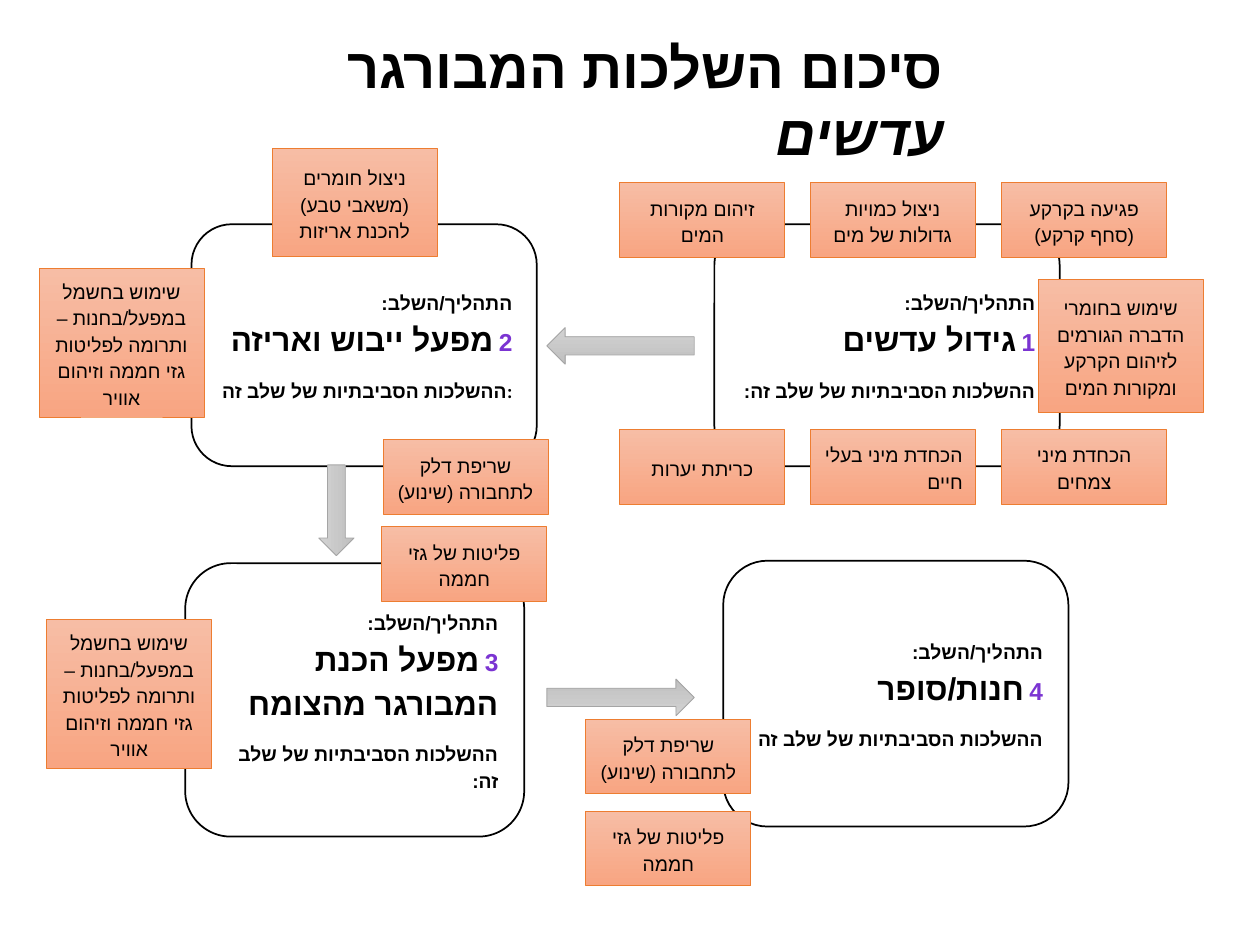
from copy import deepcopy

from lxml import etree
from pptx import Presentation
from pptx.dml.color import RGBColor
from pptx.enum.shapes import MSO_SHAPE
from pptx.enum.text import MSO_ANCHOR, PP_ALIGN
from pptx.oxml.ns import qn
from pptx.util import Inches, Pt

RECT = MSO_SHAPE.RECTANGLE
ROUND = MSO_SHAPE.ROUNDED_RECTANGLE
ARROW = MSO_SHAPE.LEFT_ARROW
MIDDLE = MSO_ANCHOR.MIDDLE
RIGHT, CENTER = PP_ALIGN.RIGHT, PP_ALIGN.CENTER

COLORS = {
    "black": "000000", "white": "FFFFFF", "number": "7B34D2",
    "label_top": "F7BDA5", "label_bottom": "F8A582", "label_line": "ED7D31",
    "arrow_top": "D2D2D2", "arrow_bottom": "C0C0C0", "arrow_line": "A5A5A5",
}


def write(tf, *runs, first=False, font="Calibri", size=11, bold=False,
          align=RIGHT, rtl=True, spacing=1.15, after=0):
    p = tf.paragraphs[0] if first else tf.add_paragraph()
    p.alignment = align
    p.line_spacing = spacing
    p.space_after = Pt(after)
    p._p.get_or_add_pPr().set("rtl", "1" if rtl else "0")
    for text, fmt in runs:
        for i, part in enumerate(text.split("\n")):
            if i:
                p.add_line_break()
                p._p[-1].append(deepcopy(r._r.rPr))
            if not part:
                continue
            r = p.add_run()
            r.text = part
            r.font.size = Pt(fmt.get("size", size))
            r.font.bold = bold
            r.font.italic = fmt.get("italic", False)
            r.font.color.rgb = RGBColor.from_string(COLORS[fmt.get("color", "black")])
            r.font.name = font
            etree.SubElement(r._r.get_or_add_rPr(), qn("a:cs"), typeface="Arial")


def add_box(kind, x, y, w, h, fills, line, width):
    sp = s.shapes.add_shape(kind, Inches(x), Inches(y), Inches(w), Inches(h))
    sp.shadow.inherit = False
    if len(fills) == 1:
        sp.fill.solid()
        sp.fill.fore_color.rgb = RGBColor.from_string(COLORS[fills[0]])
    else:
        sp.fill.gradient()
        sp.fill.gradient_angle = 270
        for stop, name in zip(sp.fill.gradient_stops, fills):
            stop.color.rgb = RGBColor.from_string(COLORS[name])
    sp.line.color.rgb = RGBColor.from_string(COLORS[line])
    sp.line.width = Pt(width)
    sp.text_frame.word_wrap = True
    sp.text_frame.vertical_anchor = MIDDLE
    return sp


prs = Presentation()
prs.slide_width, prs.slide_height = Inches(10), Inches(7.5)
s = prs.slides.add_slide(prs.slide_layouts[6])

IMPACT = "ההשלכות הסביבתיות של שלב זה"
stages = [
    ("4", "חנות/סופר", IMPACT, True, 5.74, 4.45, 2.74, 2.11),
    ("3", "מפעל הכנת המבורגר מהצומח", IMPACT + ":", True, 1.47, 4.47, 2.69, 2.17),
    ("2", "מפעל ייבוש ואריזה", IMPACT + ":", False, 1.52, 1.78, 2.74, 1.92),
    ("1", "גידול עדשים", IMPACT + ":", True, 5.67, 1.78, 2.74, 1.92),
]
for number, name, impact, rtl, x, y, w, h in stages:
    tf = add_box(ROUND, x, y, w, h, ["white"], "black", 1).text_frame
    write(tf, ("התהליך/השלב:\n", {}), (number, {"size": 14, "color": "number"}),
          (" ", {}), (name, {"size": 18}), first=True, bold=True, after=10)
    write(tf, (impact, {}), bold=True, rtl=rtl)

for x, y, w, h, angle in [(2.31, 3.91, 0.72, 0.28, 270),
                          (4.34, 2.6, 1.17, 0.29, 0),
                          (4.34, 5.39, 1.17, 0.29, 180)]:
    sp = add_box(ARROW, x, y, w, h, ["arrow_top", "arrow_bottom"], "arrow_line", 0.5)
    sp.rotation = angle

FUEL = "שריפת דלק לתחבורה (שינוע)"
GASES = "פליטות של גזי חממה"
POWER = "שימוש בחשמל במפעל/בחנות – ותרומה לפליטות גזי חממה וזיהום אוויר"
labels = [
    ("כריתת יערות", 4.92, 3.41, 0.59, CENTER),
    ("הכחדת מיני בעלי חיים", 6.43, 3.41, 0.59, RIGHT),
    ("הכחדת מיני צמחים", 7.95, 3.41, 0.59, CENTER),
    ("שימוש בחומרי הדברה הגורמים לזיהום הקרקע ומקורות המים", 8.24, 2.22, 1.05, CENTER),
    ("זיהום מקורות המים", 4.92, 1.45, 0.59, CENTER),
    ("ניצול כמויות גדולות של מים", 6.43, 1.45, 0.59, CENTER),
    ("פגיעה בקרקע\n(סחף קרקע)", 7.95, 1.45, 0.59, CENTER),
    (FUEL, 4.65, 5.71, 0.59, CENTER),
    (GASES, 4.65, 6.44, 0.59, CENTER),
    (POWER, 0.37, 4.92, 1.18, CENTER),
    ("ניצול חומרים (משאבי טבע)\nלהכנת אריזות", 2.16, 1.18, 0.86, CENTER),
    (POWER, 0.31, 2.13, 1.18, CENTER),
    (FUEL, 3.04, 3.49, 0.59, CENTER),
    (GASES, 3.03, 4.18, 0.59, CENTER),
]
for text, x, y, h, align in labels:
    sp = add_box(RECT, x, y, 1.31, h, ["label_top", "label_bottom"], "label_line", 0.5)
    write(sp.text_frame, (text, {}), first=True, align=align)

tb = s.shapes.add_textbox(Inches(1.72), Inches(0.21), Inches(5.87), Inches(0.64))
tb.text_frame.word_wrap = True
write(tb.text_frame, ("סיכום השלכות המבורגר ", {}), ("עדשים", {"italic": True}),
      first=True, font="Arial", size=32, bold=True, spacing=1.0)

prs.save("out.pptx")
